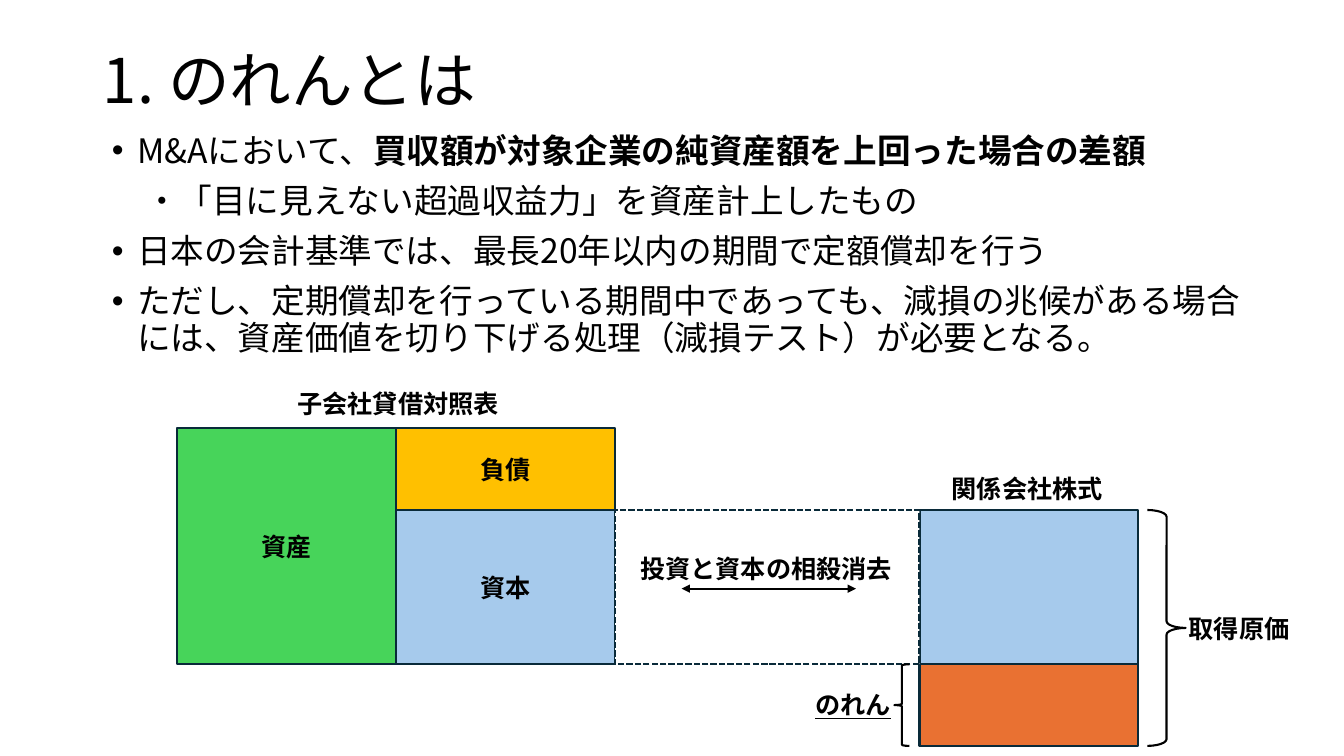
from lxml import etree
from pptx import Presentation
from pptx.dml.color import RGBColor
from pptx.enum.dml import MSO_LINE
from pptx.enum.shapes import MSO_CONNECTOR, MSO_SHAPE
from pptx.enum.text import MSO_ANCHOR, MSO_AUTO_SIZE as AutoSize, PP_ALIGN
from pptx.oxml.ns import qn
from pptx.util import Inches, Pt

COLORS = {
    "text": "000000",
    "outline": "092A39",
    "assets": "47D45A",
    "debt": "FFC000",
    "equity": "A6CAEC",
    "goodwill": "E97132",
    "white": "FFFFFF",
}
FONT = "Noto Sans CJK JP"


class SlideBuilder:
    label_format = {"size": Pt(18), "bold": True}

    def __init__(self, slide):
        self.slide = slide

    def color(self, name):
        return RGBColor.from_string(COLORS[name])

    def add_run(self, paragraph, text, **formats):
        run = paragraph.add_run()
        run.text = text
        for name, value in {"name": FONT, **formats}.items():
            setattr(run.font, name, value)
        run.font.color.rgb = self.color("text")
        east_asian = etree.SubElement(run._r.get_or_add_rPr(), qn("a:ea"))
        east_asian.set("typeface", FONT)

    def place(self, shape, *box):
        for name, value in zip(("left", "top", "width", "height"), box):
            setattr(shape, name, Inches(value))

    def title(self, text, *box):
        shape = self.slide.shapes.title
        self.place(shape, *box)
        frame = shape.text_frame
        frame.vertical_anchor = MSO_ANCHOR.MIDDLE
        frame.auto_size = AutoSize.NONE
        paragraph = frame.paragraphs[0]
        paragraph.alignment = PP_ALIGN.LEFT
        paragraph.line_spacing = 0.9
        self.add_run(paragraph, text, size=Pt(44))

    def body(self, items, *box):
        shape = self.slide.placeholders[1]
        self.place(shape, *box)
        frame = shape.text_frame
        frame.auto_size = AutoSize.NONE
        for index, (bulleted, runs) in enumerate(items):
            paragraph = frame.add_paragraph() if index else frame.paragraphs[0]
            properties = paragraph._p.get_or_add_pPr()
            properties.set("marL", str(Inches(0.25 if bulleted else 0.33)))
            properties.set("indent", str(Inches(-0.25 if bulleted else 0)))
            if bulleted:
                etree.SubElement(properties, qn("a:buFont")).set("typeface", "Arial")
                etree.SubElement(properties, qn("a:buChar")).set("char", "•")
            else:
                etree.SubElement(properties, qn("a:buNone"))
            paragraph.line_spacing = 0.9
            paragraph.space_before = Pt(10 if index else 0)
            for text, bold in runs:
                self.add_run(paragraph, text, size=Pt(24), bold=bold)

    def shape(self, kind, box, line):
        shape = self.slide.shapes.add_shape(kind, *map(Inches, box))
        shape.shadow.inherit = False
        shape.line.color.rgb = self.color(line)
        shape.line.width = Pt(1.5)
        return shape

    def block(self, fill, *box, text="", dashed=False):
        shape = self.shape(MSO_SHAPE.RECTANGLE, box, "outline")
        shape.fill.solid()
        shape.fill.fore_color.rgb = self.color(fill)
        if dashed:
            shape.line.dash_style = MSO_LINE.SQUARE_DOT
        if text:
            shape.text_frame.vertical_anchor = MSO_ANCHOR.MIDDLE
            paragraph = shape.text_frame.paragraphs[0]
            paragraph.alignment = PP_ALIGN.CENTER
            self.add_run(paragraph, text, **self.label_format)

    def brace(self, kind, *box, curve=0.08):
        shape = self.shape(kind, box, "text")
        shape.fill.background()
        shape.adjustments[0] = curve

    def label(self, text, *box, wrap=True, **formats):
        shape = self.slide.shapes.add_textbox(*map(Inches, box))
        frame = shape.text_frame
        frame.word_wrap = wrap
        frame.auto_size = AutoSize.SHAPE_TO_FIT_TEXT
        self.add_run(frame.paragraphs[0], text, **self.label_format, **formats)

    def double_arrow(self, *ends):
        connector = self.slide.shapes.add_connector(
            MSO_CONNECTOR.STRAIGHT, *map(Inches, ends))
        connector.line.color.rgb = self.color("text")
        connector.line.width = Pt(1.5)
        line = connector.line._get_or_add_ln()
        for end in ("a:headEnd", "a:tailEnd"):
            etree.SubElement(line, qn(end)).set("type", "triangle")
        etree.SubElement(connector._element.spPr, qn("a:effectLst"))


def main():
    presentation = Presentation()
    presentation.slide_width = Inches(13.33)
    presentation.slide_height = Inches(7.5)
    builder = SlideBuilder(
        presentation.slides.add_slide(presentation.slide_layouts[1]))

    # Title and explanation
    builder.title("1. のれんとは", 0.92, 0.1, 11.5, 1.45)
    builder.body([
        (True, [("M&Aにおいて、", False),
                ("買収額が対象企業の純資産額を上回った場合の差額", True)]),
        (False, [("・「目に見えない超過収益力」を資産計上したもの", False)]),
        (True, [("日本の会計基準では、最長20年以内の期間で定額償却を行う", False)]),
        (True, [("ただし、定期償却を行っている期間中であっても、減損の兆候がある場合"
                 "には、資産価値を切り下げる処理（減損テスト）が必要となる。", False)]),
    ], 1.01, 1.28, 11.5, 4.76)

    # Diagram grid
    width, short, tall = 2.17, 0.81, 1.53
    assets_left, debt_left, gap_left, shares_left = 1.76, 3.93, 6.1, 9.12
    top = 4.25
    equity_top = top + short
    goodwill_top = equity_top + tall
    full = short + tall

    # Balance sheet, elimination area and shares
    builder.block("assets", assets_left, top, width, full, text="資産")
    builder.block("debt", debt_left, top, width, short, text="負債")
    builder.block("equity", shares_left, equity_top, width, tall)
    builder.block("goodwill", shares_left, goodwill_top, width, short)
    builder.block("equity", debt_left, equity_top, width, tall, text="資本")
    builder.block("white", gap_left, equity_top, shares_left - gap_left, tall,
                  dashed=True)
    builder.double_arrow(6.76, 5.84, 8.49, 5.84)

    # Braces
    builder.brace(MSO_SHAPE.RIGHT_BRACE, 11.38, equity_top, 0.38, full, curve=0.176)
    builder.brace(MSO_SHAPE.LEFT_BRACE, 8.87, goodwill_top, 0.15, short)

    # Labels
    builder.label("投資と資本の相殺消去", 6.25, 5.44, 2.73, 0.4, wrap=False)
    builder.label("のれん", 7.99, 6.79, 1, 0.4, underline=True)
    builder.label("取得原価", 11.69, 6.04, 1.41, 0.4)
    builder.label("子会社貸借対照表", 2.85, 3.8, 4.13, 0.4)
    builder.label("関係会社株式", 9.34, 4.65, 1.72, 0.4, wrap=False)

    presentation.save("out.pptx")


if __name__ == "__main__":
    main()
